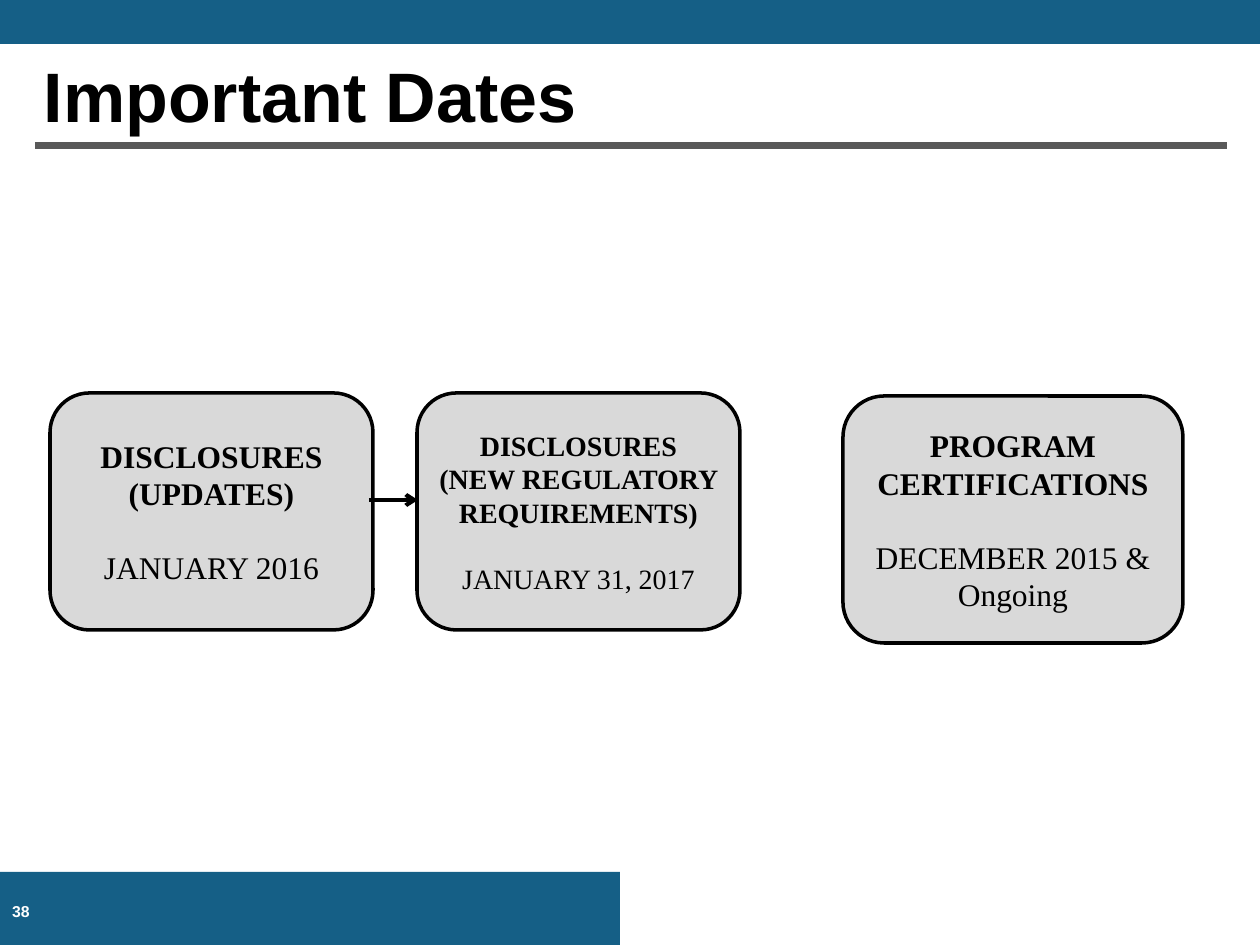
import pptx
import pptx.dml.color
import pptx.enum.shapes
import pptx.enum.text
import pptx.oxml
import pptx.oxml.ns
import pptx.util

RGBColor = pptx.dml.color.RGBColor
BLUE = RGBColor(0x15, 0x5F, 0x86)
DARK_GRAY = RGBColor(0x59, 0x59, 0x59)
LIGHT_GRAY = RGBColor(0xD9, 0xD9, 0xD9)
BLACK = RGBColor(0, 0, 0)
WHITE = RGBColor(255, 255, 255)

EMU_PER_PX = 914400 / 126
LINE_HEIGHT = 1.15
SHAPES = pptx.enum.shapes.MSO_SHAPE
ANCHOR = pptx.enum.text.MSO_ANCHOR
ALIGN = pptx.enum.text.PP_ALIGN


def px(length):
    """Turn whole pixels into EMU."""
    return pptx.util.Emu(round(length * EMU_PER_PX))


def style_font(font, name, size, color, bold):
    """Set the font, size, colour and weight of some text."""
    font.name, font.size, font.bold = name, pptx.util.Pt(size), bold
    font.color.rgb = color


def set_margins(text_frame, horizontal, vertical):
    """Set the inner margins of a text frame."""
    text_frame.margin_left = text_frame.margin_right = px(horizontal)
    text_frame.margin_top = text_frame.margin_bottom = px(vertical)


def add_block(slide, kind, box, fill):
    """Add a filled shape without outline or shadow."""
    shape = slide.shapes.add_shape(kind, *map(px, box))
    shape.shadow.inherit = False
    shape.fill.solid()
    shape.fill.fore_color.rgb = fill
    shape.line.fill.background()
    return shape


def add_line(slide, start, end, color, width, arrow=False):
    """Add a straight line, with an open arrowhead if wanted."""
    connector = slide.shapes.add_connector(
        pptx.enum.shapes.MSO_CONNECTOR.STRAIGHT, *map(px, start + end))
    connector.line.color.rgb = color
    connector.line.width = pptx.util.Pt(width)
    properties = connector._element.spPr
    if arrow:
        tail = pptx.oxml.parse_xml(
            f'<a:tailEnd {pptx.oxml.ns.nsdecls("a")} type="arrow"/>')
        connector.line._get_or_add_ln().append(tail)
    properties.append(pptx.oxml.parse_xml(f'<a:effectLst {pptx.oxml.ns.nsdecls("a")}/>'))


def add_label(slide, box, text, size, color):
    """Add a bold Arial text box of one paragraph."""
    text_frame = slide.shapes.add_textbox(*map(px, box)).text_frame
    text_frame.word_wrap = True
    text_frame.text = text
    style_font(text_frame.paragraphs[0].runs[0].font, "Arial", size, color, True)
    return text_frame


def add_header(slide, box):
    """Add the top band, the title and the rule below it."""
    left, top, width, height = box
    add_block(slide, SHAPES.RECTANGLE, (left, top, width, 44), BLUE)
    rule_y = top + height
    add_line(slide, (left + 35, rule_y), (left + 1227, rule_y), DARK_GRAY, 4)
    title = add_label(slide, (left + 35, top + 42, 882, 104), "Important Dates", 40, BLACK)
    title.vertical_anchor = ANCHOR.MIDDLE
    set_margins(title, 9, 5)


def add_footer(slide, box):
    """Add the bottom band with the slide number."""
    left, top, width, height = box
    add_block(slide, SHAPES.RECTANGLE, box, BLUE)
    number = add_label(slide, (left - 42, top + 24, 126, 53), "38", 9, WHITE)
    number.paragraphs[0].alignment = ALIGN.CENTER


def add_date_card(slide, box, heading, date, size):
    """Add a rounded card with bold heading lines and a date one line below."""
    card = add_block(slide, SHAPES.ROUNDED_RECTANGLE, box, LIGHT_GRAY)
    card.line.color.rgb = BLACK
    card.line.width = pptx.util.Pt(2)
    text_frame = card.text_frame
    text_frame.word_wrap = True
    text_frame.vertical_anchor = ANCHOR.MIDDLE
    set_margins(text_frame, 9, 5)
    text_frame.text = "\n".join(heading + [date])
    for paragraph in text_frame.paragraphs:
        paragraph.alignment = ALIGN.CENTER
        style_font(paragraph.runs[0].font, "Times New Roman", size, BLACK, True)
    paragraph.space_before = pptx.util.Pt(round(size * LINE_HEIGHT, 1))
    paragraph.runs[0].font.bold = False


def add_timeline(slide, box):
    """Add the two linked disclosure cards and the certification card."""
    left, top, width, height = box
    card_width, pitch = 323, 367
    add_date_card(slide, (left + width - 340, top + 3, 340, 247),
                  ["PROGRAM", "CERTIFICATIONS"], "DECEMBER 2015 & Ongoing", 18)
    add_date_card(slide, (left, top, card_width, height),
                  ["DISCLOSURES (UPDATES)"], "JANUARY 2016", 18)
    add_date_card(slide, (left + pitch, top, card_width, height),
                  ["DISCLOSURES", "(NEW REGULATORY REQUIREMENTS)"], "JANUARY 31, 2017", 16)
    arrow_y = top + 107
    add_line(slide, (left + card_width - 4, arrow_y), (left + pitch + 1, arrow_y),
             BLACK, 2.25, arrow=True)


def main():
    """Build the slide and save it."""
    presentation = pptx.Presentation()
    presentation.slide_width, presentation.slide_height = px(1260), px(945)
    slide = presentation.slides.add_slide(presentation.slide_layouts[6])
    add_header(slide, (0, 0, 1260, 146))
    add_timeline(slide, (50, 393, 1133, 237))
    add_footer(slide, (0, 872, 620, 73))
    presentation.save("out.pptx")


if __name__ == "__main__":
    main()
